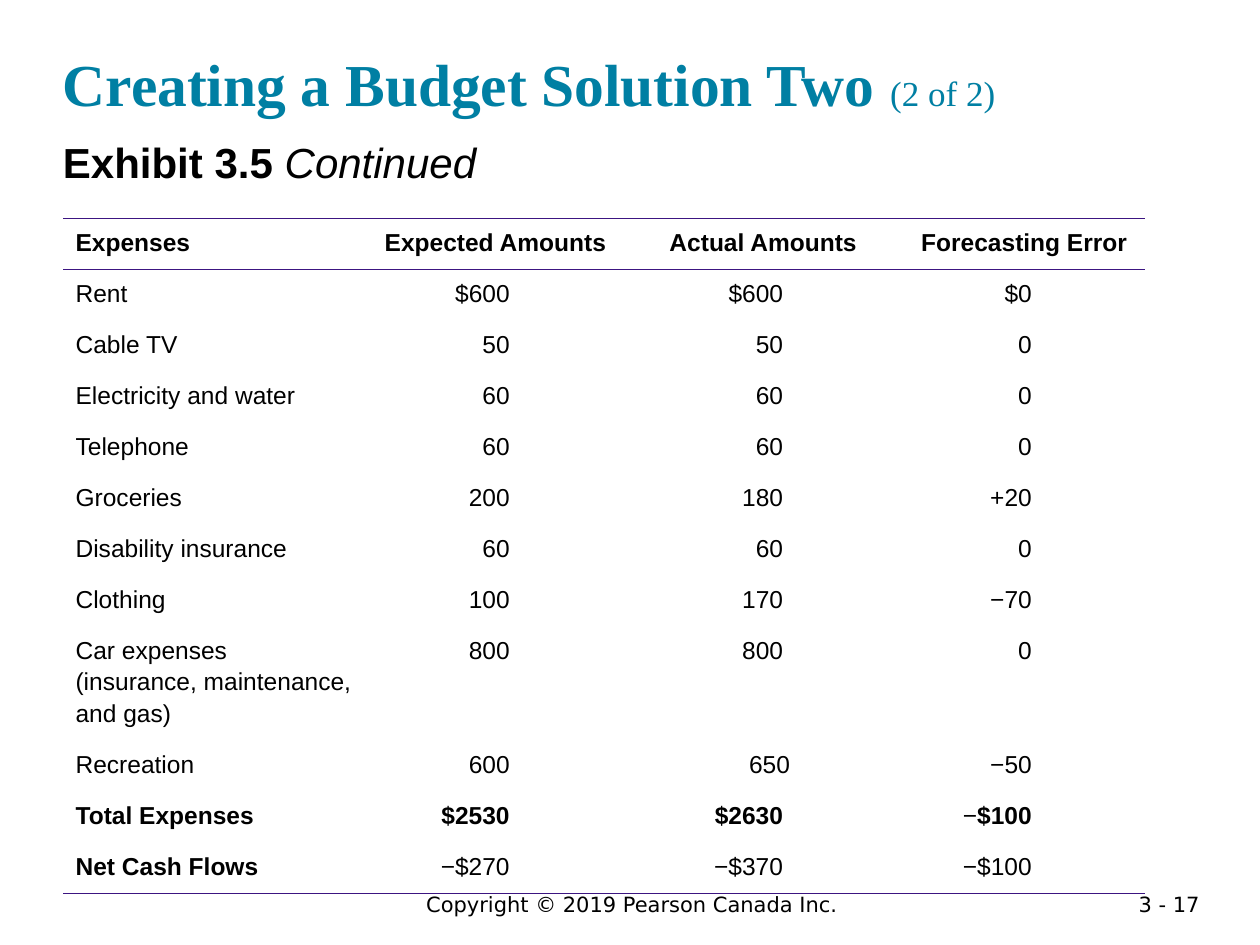
import pptx
import pptx.dml.color
import pptx.enum.text
import pptx.oxml
import pptx.oxml.ns
import pptx.util

RGB = pptx.dml.color.RGBColor
TEAL = RGB(0x00, 0x7F, 0xA3)
BLACK = RGB(0x00, 0x00, 0x00)
PURPLE = RGB(0x3C, 0x15, 0x81)
ALIGN = pptx.enum.text.PP_ALIGN
ANCHOR = pptx.enum.text.MSO_ANCHOR

TITLE = dict(name="Times New Roman", size=34, bold=True, color=TEAL)
PAGE = dict(TITLE, size=20, bold=False)
HEADING = dict(name="Arial", size=24, bold=True, color=BLACK)
CONTINUED = dict(HEADING, bold=False, italic=True)
BODY = dict(name="Arial", size=14, bold=False, color=BLACK)
STRONG = dict(BODY, bold=True)
FOOTER = dict(name="DejaVu Sans", size=12, color=BLACK)

HEADERS = ["Expenses", "Expected Amounts ", "Actual Amounts ", "Forecasting Error"]
EXPENSES = [
    ("Rent", "$600 ", "$600 ", "$0"),
    ("Cable TV", "50 ", "50 ", "0"),
    ("Electricity and water", "60 ", "60 ", "0"),
    ("Telephone", "60 ", "60 ", "0"),
    ("Groceries", "200 ", "180 ", "+20"),
    ("Disability insurance", "60 ", "60 ", "0"),
    ("Clothing", "100 ", "170 ", "−70"),
    ("Car expenses (insurance, maintenance, and gas)", "800 ", "800 ", "0"),
    ("Recreation", "600 ", "650", "−50"),
]


def styled(values, style):
    """Turn plain strings into cells of one styled run each."""
    return [[(value, style)] for value in values]


class Deck:
    """Slide builder on a grid of 20 columns by 30 rows."""

    COLS, ROWS = 20, 30

    def __init__(self, width, height):
        self.prs = pptx.Presentation()
        self.prs.slide_width = pptx.util.Inches(width)
        self.prs.slide_height = pptx.util.Inches(height)
        self.s = self.prs.slides.add_slide(self.prs.slide_layouts[6])

    def x(self, cols):
        return round(self.prs.slide_width * cols / self.COLS)

    def y(self, rows):
        return round(self.prs.slide_height * rows / self.ROWS)

    def fill_text(self, tf, runs, align, spacing=None):
        p = tf.paragraphs[0]
        p.alignment = align
        p.line_spacing = spacing
        for text, style in runs:
            r = p.add_run()
            r.text = text
            for key, value in style.items():
                if key == "color":
                    r.font.color.rgb = value
                else:
                    setattr(r.font, key, pptx.util.Pt(value) if key == "size" else value)

    def text(self, left, top, width, height, runs, align=ALIGN.LEFT,
             anchor=ANCHOR.TOP, inset=True):
        sp = self.s.shapes.add_textbox(self.x(left), self.y(top), self.x(width), self.y(height))
        tf = sp.text_frame
        tf.word_wrap = True
        tf.vertical_anchor = anchor
        if not inset:
            tf.margin_left = tf.margin_right = tf.margin_top = tf.margin_bottom = 0
        self.fill_text(tf, runs, align)

    def borders(self, cell, ruled):
        """Rule the named sides in purple and clear the others."""
        tc_pr = cell._tc.get_or_add_tcPr()
        for i, side in enumerate("LRTB"):
            paint = (f'<a:solidFill><a:srgbClr val="{PURPLE}"/></a:solidFill>'
                     if side in ruled else "<a:noFill/>")
            tc_pr.insert(i, pptx.oxml.parse_xml(
                f'<a:ln{side} {pptx.oxml.ns.nsdecls("a")} w="12700">{paint}</a:ln{side}>'))

    def table(self, left, top, widths, row_height, rows):
        frame = self.s.shapes.add_table(
            len(rows), len(widths), self.x(left), self.y(top),
            self.x(sum(widths)), self.y(row_height * len(rows)))
        table = frame.table
        table.first_row = table.horz_banding = False
        for column, width in zip(table.columns, widths):
            column.width = self.x(width)
        rules = {0: "TB", 1: "T", len(rows) - 1: "B"}
        for i, row in enumerate(rows):
            table.rows[i].height = self.y(row_height)
            for j, runs in enumerate(row):
                cell = table.cell(i, j)
                cell.fill.background()
                self.borders(cell, rules.get(i, ""))
                align = ALIGN.LEFT
                if j:
                    align = ALIGN.RIGHT if i else ALIGN.CENTER
                    if i:
                        cell.margin_right = pptx.util.Inches(0.9)
                self.fill_text(cell.text_frame, runs, align, 1.15)


def main():
    deck = Deck(10, 7.5)

    # Title and heading
    deck.text(1, 1, 18, 2.76, [("Creating a Budget Solution Two ", TITLE), ("(2 of 2)", PAGE)],
              anchor=ANCHOR.BOTTOM, inset=False)
    deck.text(1, 4.32, 18, 2, [("Exhibit 3.5 ", HEADING), ("Continued", CONTINUED)], inset=False)

    # Budget table
    rows = [styled(HEADERS, STRONG)]
    rows += [styled(expense, BODY) for expense in EXPENSES]
    rows.append(styled(["Total Expenses", "$2530 ", "$2630 "], STRONG)
                + [[("−", BODY), ("$100", STRONG)]])
    rows.append(styled(["Net Cash Flows"], STRONG)
                + styled(["−$270 ", "−$370 ", "−$100"], BODY))
    deck.table(1, 6.94, [4.84, 4.16, 4.34, 3.84], 1.62, rows)

    # Footer
    deck.text(3.28, 28.12, 13.5, 1.2, [("Copyright © 2019 Pearson Canada Inc.", FOOTER)],
              ALIGN.CENTER)
    deck.text(17.24, 28.12, 2, 0.88, [("3 - 17", FOOTER)], ALIGN.RIGHT)

    deck.prs.save("out.pptx")


if __name__ == "__main__":
    main()
